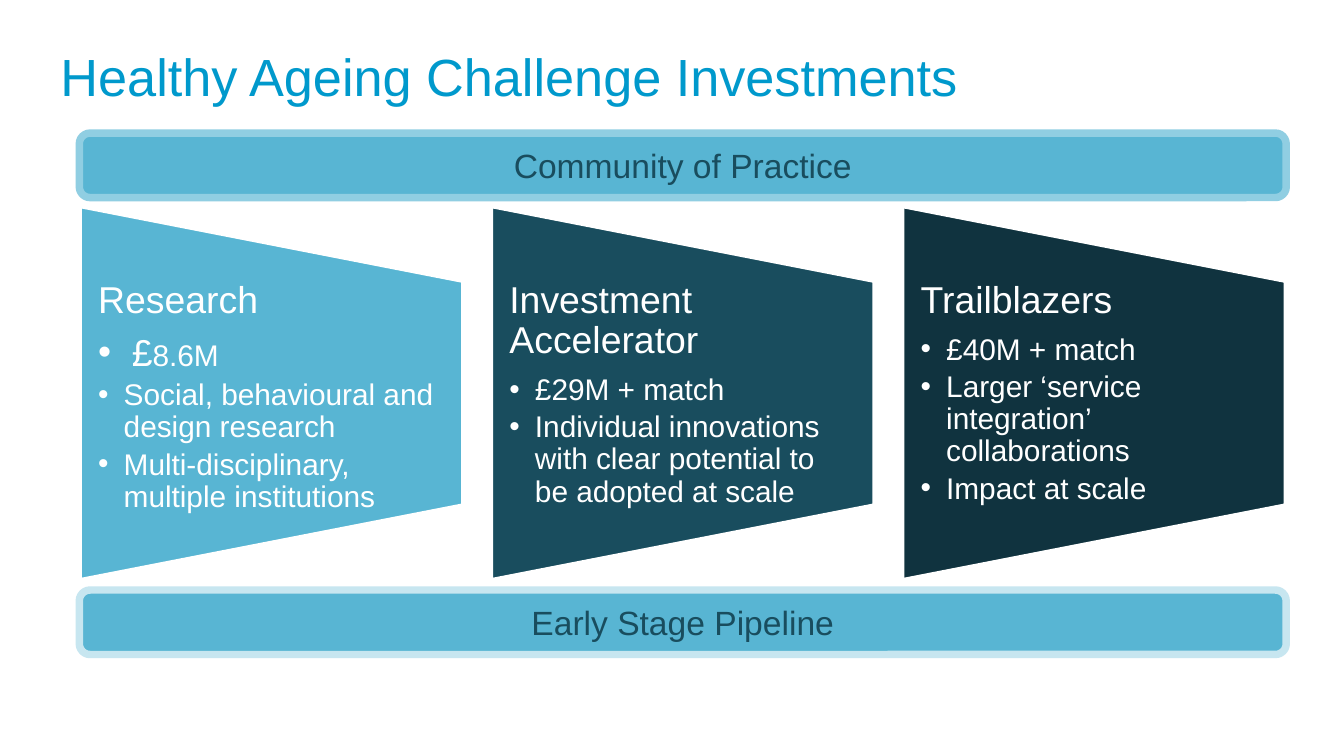
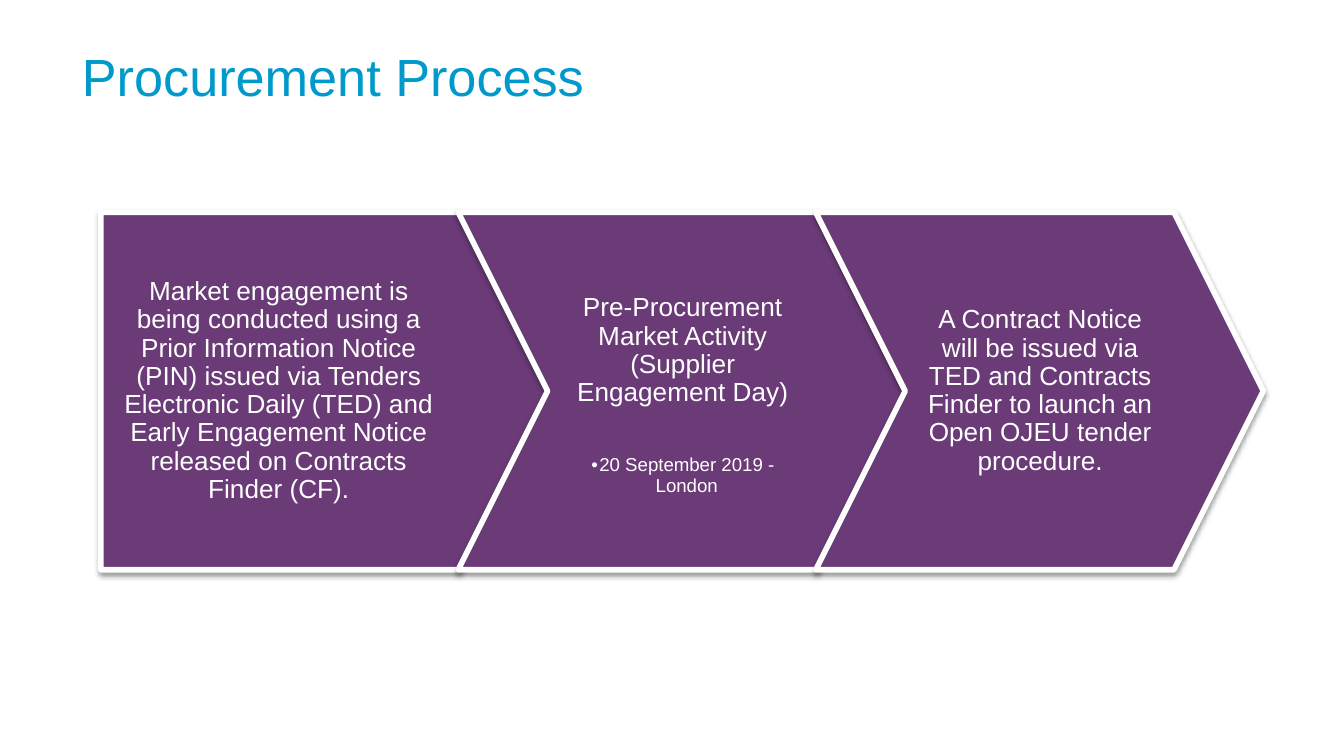
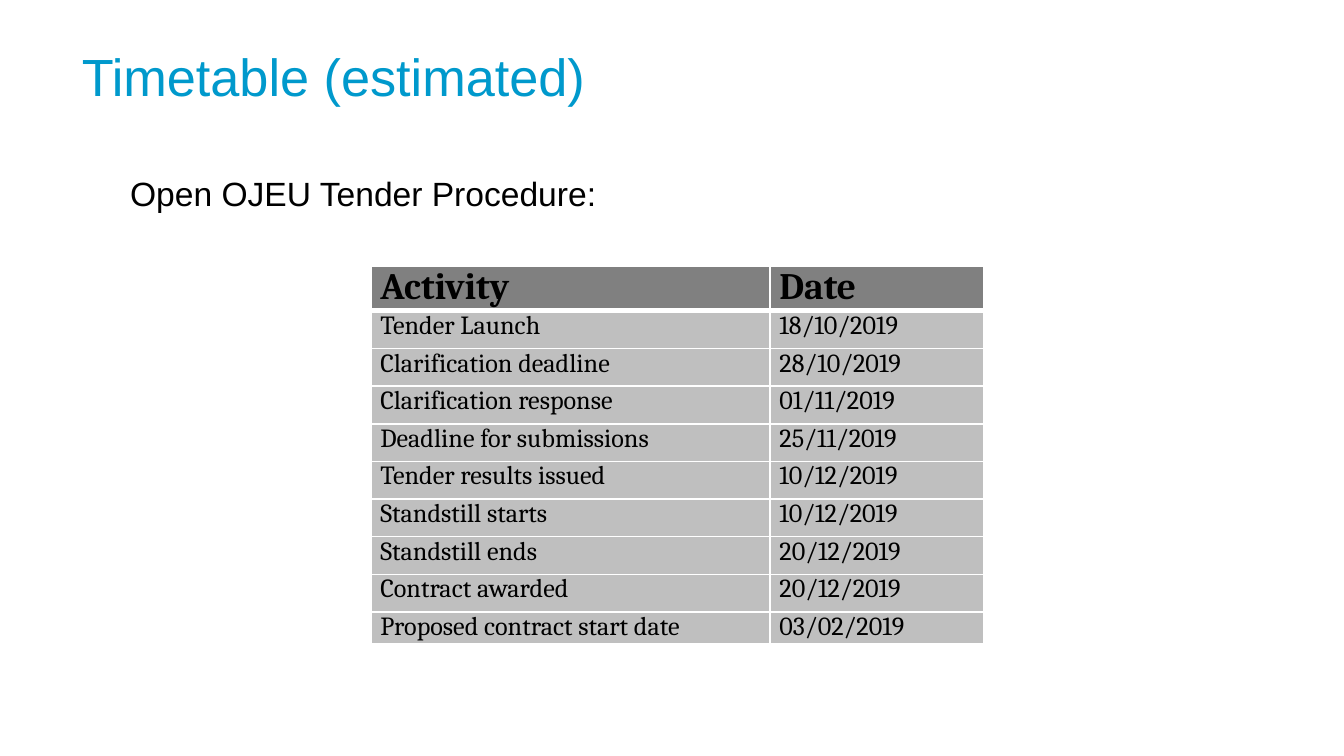
import lxml.etree
import pptx
import pptx.dml.color
import pptx.enum.shapes
import pptx.enum.text
import pptx.oxml
import pptx.oxml.ns
import pptx.util

Inches = pptx.util.Inches
Pt = pptx.util.Pt
SHAPES = pptx.enum.shapes.MSO_SHAPE
ALIGN = pptx.enum.text.PP_ALIGN
ANCHOR = pptx.enum.text.MSO_ANCHOR
qn = pptx.oxml.ns.qn

TITLE_BLUE = "0099CC"
SKY = "58B5D3"
TEAL = "194D5E"
NAVY = "10333F"
PURPLE = "6A3B77"
WHITE = "FFFFFF"
BLACK = "000000"
HEADER_GREY = "808080"
ROW_GREY = "BFBFBF"
STEP_TOP, STEP_HEIGHT = 1.58, 2.66

STREAMS = [
    (SKY, "Research", [
        [("£", 20), ("8.6M", 16)],
        [("Social, behavioural and design research", 16)],
        [("Multi-disciplinary, multiple institutions", 16)],
    ]),
    (TEAL, "Investment Accelerator", [
        [("£29M + match", 16)],
        [("Individual innovations with clear potential to be adopted at scale", 16)],
    ]),
    (NAVY, "Trailblazers", [
        [("£40M + match", 16)],
        [("Larger ‘service integration’ collaborations", 16)],
        [("Impact at scale", 16)],
    ]),
]

TIMETABLE = [
    ("Activity", "Date"),
    ("Tender Launch", "18/10/2019"),
    ("Clarification deadline", "28/10/2019"),
    ("Clarification response", "01/11/2019"),
    ("Deadline for submissions", "25/11/2019"),
    ("Tender results issued", "10/12/2019"),
    ("Standstill starts", "10/12/2019"),
    ("Standstill ends", "20/12/2019"),
    ("Contract awarded", "20/12/2019"),
    ("Proposed contract start date", "03/02/2019"),
]


def colour(value):
    return pptx.dml.color.RGBColor.from_string(value)


def set_insets(text_frame, left, top, right, bottom):
    text_frame.margin_left = Inches(left)
    text_frame.margin_top = Inches(top)
    text_frame.margin_right = Inches(right)
    text_frame.margin_bottom = Inches(bottom)


def format_run(run, size, text_colour, font="Arial", bold=False):
    run.font.name = font
    run.font.size = Pt(size)
    run.font.bold = bold
    run.font.color.rgb = colour(text_colour)


def write_paragraph(paragraph, runs, text_colour=WHITE, align=ALIGN.LEFT, spacing=None, after=0):
    paragraph.alignment = align
    paragraph.line_spacing = spacing
    paragraph.space_after = Pt(after)
    for text, size in runs:
        run = paragraph.add_run()
        run.text = text
        format_run(run, size, text_colour)


def add_bullet(paragraph, hang):
    paragraph.level = 1
    properties = paragraph._p.get_or_add_pPr()
    properties.set("marL", str(Inches(hang)))
    properties.set("indent", str(-Inches(hang)))
    lxml.etree.SubElement(properties, qn("a:buFont"), typeface="Arial")
    lxml.etree.SubElement(properties, qn("a:buChar"), char="•")


def add_titled_slide(presentation, title, left, width):
    slide = presentation.slides.add_slide(presentation.slide_layouts[5])
    shape = slide.shapes.title
    shape.left, shape.top = Inches(left), Inches(0.06)
    shape.width, shape.height = Inches(width), Inches(1)
    text_frame = shape.text_frame
    text_frame.text = title
    text_frame.vertical_anchor = ANCHOR.MIDDLE
    text_frame.paragraphs[0].alignment = ALIGN.LEFT
    format_run(text_frame.paragraphs[0].runs[0], 28, TITLE_BLUE)
    return slide


def add_filled_shape(slide, kind, left, top, width, height, fill, line, line_width):
    shape = slide.shapes.add_shape(kind, Inches(left), Inches(top), Inches(width), Inches(height))
    shape.shadow.inherit = False
    shape.fill.solid()
    shape.fill.fore_color.rgb = colour(fill)
    shape.line.color.rgb = colour(line)
    shape.line.width = Pt(line_width)
    return shape


def add_text_box(slide, left, top, width, height, anchor=ANCHOR.TOP):
    box = slide.shapes.add_textbox(Inches(left), Inches(top), Inches(width), Inches(height))
    box.text_frame.word_wrap = True
    box.text_frame.vertical_anchor = anchor
    return box.text_frame


def add_bar(slide, top, text, outline):
    bar = add_filled_shape(slide, SHAPES.ROUNDED_RECTANGLE, 0.59, top, 8.98, 0.48, SKY, outline, 4)
    bar.text_frame.word_wrap = False
    bar.text_frame.vertical_anchor = ANCHOR.MIDDLE
    write_paragraph(bar.text_frame.paragraphs[0], [(text, 18)], TEAL, ALIGN.CENTER)


def add_stream(slide, left, fill, heading, items):
    panel = add_filled_shape(slide, SHAPES.FLOWCHART_MANUAL_OPERATION,
                             left + 0.04, 1.5, 2.78, 2.85, fill, WHITE, 2)
    panel.rotation = 270
    text_frame = add_text_box(slide, left, 2.09, 2.85, 1.67)
    set_insets(text_frame, 0.14, 0, 0.14, 0)
    write_paragraph(text_frame.paragraphs[0], [(heading, 20)], spacing=0.9, after=7)
    for runs in items:
        paragraph = text_frame.add_paragraph()
        add_bullet(paragraph, 0.25 if runs[0][1] == 20 else 0.19)
        write_paragraph(paragraph, runs, spacing=0.9, after=2.75)


def add_soft_shadow(shape):
    effects = shape._element.spPr.find(qn("a:effectLst"))
    shadow = lxml.etree.SubElement(effects, qn("a:outerShdw"), blurRad=str(Pt(3.1)),
                                   dist=str(Pt(1.6)), dir="5400000", rotWithShape="0")
    shade = lxml.etree.SubElement(shadow, qn("a:srgbClr"), val=BLACK)
    lxml.etree.SubElement(shade, qn("a:alpha"), val="38000")


def add_step(slide, kind, left):
    step = add_filled_shape(slide, kind, left, STEP_TOP, 3.33, STEP_HEIGHT, PURPLE, WHITE, 3)
    step.adjustments[0] = 0.25
    add_soft_shadow(step)


def add_step_text(slide, left, width, text, right_inset=0.12, anchor=ANCHOR.MIDDLE,
                  top_inset=0.04, after=6):
    text_frame = add_text_box(slide, left, STEP_TOP, width, STEP_HEIGHT, anchor)
    set_insets(text_frame, 0.12, top_inset, right_inset, 0.04)
    write_paragraph(text_frame.paragraphs[0], [(text, 14)], align=ALIGN.CENTER,
                    spacing=0.9, after=after)
    return text_frame


def set_cell_borders(cell, widths):
    properties = cell._tc.get_or_add_tcPr()
    for side, width in zip("LRTB", widths):
        line = lxml.etree.SubElement(properties, qn("a:ln" + side), w=str(Pt(width)))
        fill = lxml.etree.SubElement(line, qn("a:solidFill"))
        lxml.etree.SubElement(fill, qn("a:srgbClr"), val=WHITE)


def add_timetable(slide):
    frame = slide.shapes.add_table(len(TIMETABLE), 2, Inches(2.76), Inches(1.98),
                                   Inches(4.56), Inches(2.8))
    table = frame.table
    table.columns[0].width = Inches(2.97)
    table.columns[1].width = Inches(1.59)
    table.rows[len(TIMETABLE) - 1].height = Inches(0.22)
    for row_index, row in enumerate(TIMETABLE):
        header = row_index == 0
        for column_index, text in enumerate(row):
            cell = table.cell(row_index, column_index)
            set_insets(cell, 0.07, 0, 0.07, 0)
            set_cell_borders(cell, (1, 1, 3 if row_index == 1 else 1, 3 if header else 1))
            cell.fill.solid()
            cell.fill.fore_color.rgb = colour(HEADER_GREY if header else ROW_GREY)
            cell.text_frame.text = text
            format_run(cell.text_frame.paragraphs[0].runs[0], 20 if header else 14,
                       BLACK, "Cambria", header)


def build_investments(presentation):
    slide = add_titled_slide(presentation, "Healthy Ageing Challenge Investments", 0.35, 7.32)
    for index, (fill, heading, items) in enumerate(STREAMS):
        add_stream(slide, 0.59 + index * 3.06, fill, heading, items)
    add_bar(slide, 0.99, "Community of Practice", "90CEE2")
    add_bar(slide, 4.39, "Early Stage Pipeline", "C7E6F0")


def build_process(presentation):
    slide = add_titled_slide(presentation, "Procurement Process", 0.51, 6.93)
    for index, kind in enumerate((SHAPES.PENTAGON, SHAPES.CHEVRON, SHAPES.CHEVRON)):
        add_step(slide, kind, 0.75 + index * STEP_HEIGHT)
    add_step_text(slide, 0.75, 3,
                  "Market engagement is being conducted using a Prior Information Notice (PIN) "
                  "issued via Tenders Electronic Daily (TED) and Early Engagement Notice "
                  "released on Contracts Finder (CF).", right_inset=0.47)
    activity = add_step_text(slide, 4.08, 2,
                             "Pre-Procurement Market Activity (Supplier Engagement Day)",
                             anchor=ANCHOR.TOP, top_inset=0.61, after=26)
    event = activity.add_paragraph()
    add_bullet(event, 0.06)
    write_paragraph(event, [("20 September 2019 - London", 10)], align=ALIGN.CENTER, spacing=0.9)
    add_step_text(slide, 6.74, 2,
                  "A Contract Notice will be issued via TED and Contracts Finder to launch "
                  "an Open OJEU tender procedure.")


def build_timetable(presentation):
    slide = add_titled_slide(presentation, "Timetable (estimated)", 0.51, 6.93)
    introduction = add_text_box(slide, 0.87, 1.24, 8.19, 3.39)
    write_paragraph(introduction.paragraphs[0], [("Open OJEU Tender Procedure:", 18)], BLACK)
    add_timetable(slide)


def main():
    presentation = pptx.Presentation()
    presentation.slide_width = Inches(10)
    presentation.slide_height = presentation.slide_width * 9 // 16
    build_investments(presentation)
    build_process(presentation)
    build_timetable(presentation)
    presentation.save("out.pptx")


if __name__ == "__main__":
    main()
